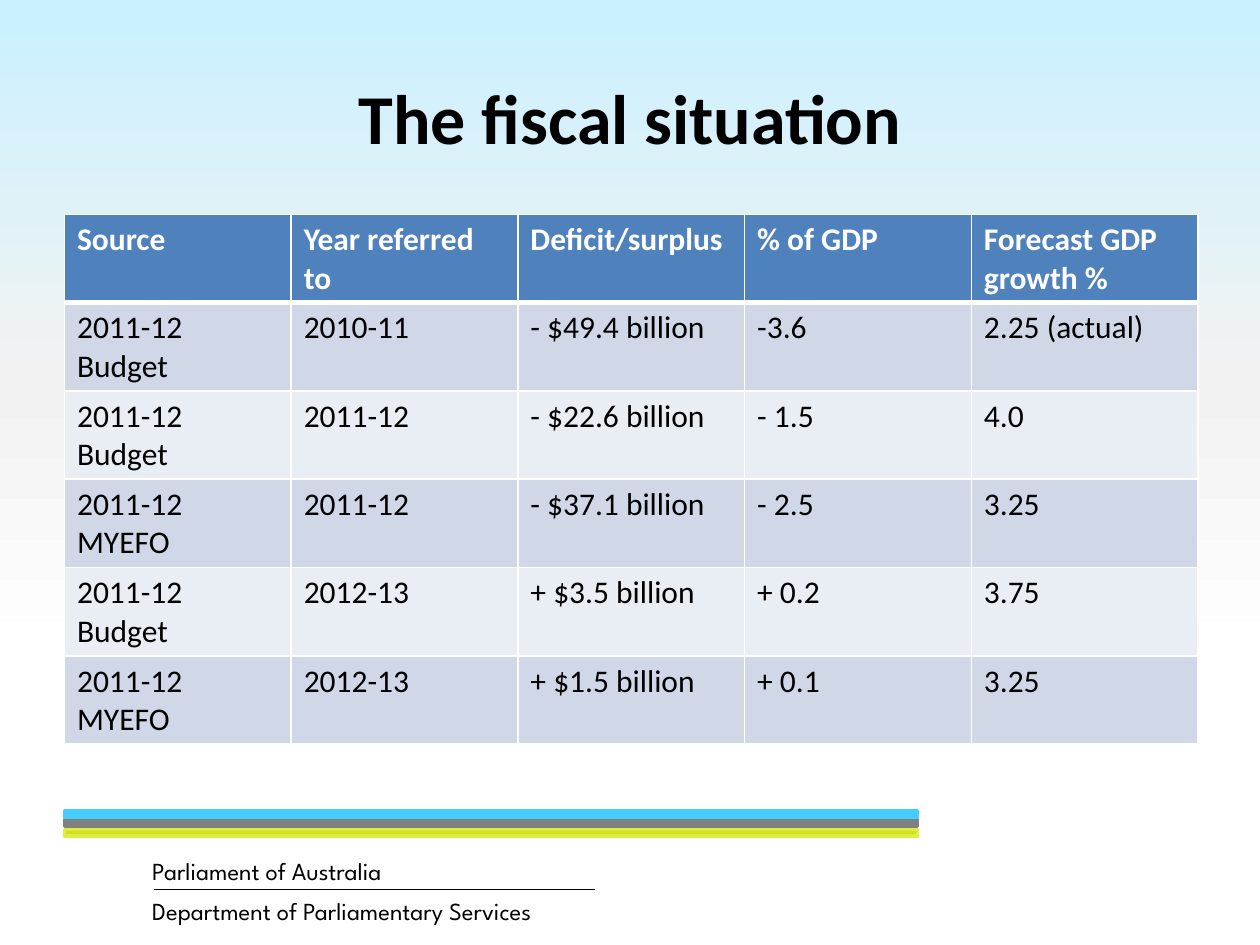
"""Build the fiscal situation slide with its forecast table and department footer."""
from dataclasses import dataclass

from lxml import etree
from pptx import Presentation
from pptx import util as u
from pptx.dml.color import RGBColor
from pptx.enum import shapes, text
from pptx.oxml import ns


@dataclass(frozen=True)
class Theme:
    body_font: str = "Calibri"
    footer_font: str = "League Spartan"
    title_size: int = 40
    table_size: int = 18
    footer_size: int = 14
    ink: str = "000000"
    paper: str = "FFFFFF"
    header: str = "4F81BD"
    bands: tuple = ("D0D8E8", "E9EDF4")
    sky: tuple = ((0, "C9F1FF"), (40, "F2F2F2"), (70, "FFFFFF"), (100, "FFFFFF"))
    blue: str = "43CEFF"
    grey: str = "808080"
    lime: str = "CEE020"
    lime_edge: str = "DDEE3E"


def rgb(value):
    return RGBColor.from_string(value)


def add_node(parent, tag, **attributes):
    return etree.SubElement(parent, ns.qn(tag), attributes)


class SlideBuilder:
    def __init__(self, page, theme):
        self.page = page
        self.theme = theme

    def background(self, stops):
        fill = self.page.background.fill
        fill.gradient()
        fill.gradient_angle = 270
        stop_list = next(self.page.element.iter(ns.qn("a:gsLst")))
        for stop in list(stop_list):
            stop_list.remove(stop)
        for percent, colour in stops:
            stop = add_node(stop_list, "a:gs", pos=str(percent * 1000))
            add_node(stop, "a:srgbClr", val=colour)

    def span(self, para, words, font, size, colour, bold=False):
        span = para.add_run()
        span.text = words
        span.font.name = font
        span.font.size = u.Pt(size)
        span.font.bold = bold
        span.font.color.rgb = rgb(colour)

    def text_box(self, left, top, width, height):
        box = self.page.shapes.add_textbox(u.Cm(left), u.Cm(top), u.Cm(width), u.Cm(height))
        frame = box.text_frame
        frame.word_wrap = True
        frame.vertical_anchor = text.MSO_ANCHOR.MIDDLE
        return frame

    def title(self, words):
        para = self.text_box(1.27, 0.76, 22.86, 3.18).paragraphs[0]
        para.alignment = text.PP_ALIGN.CENTER
        self.span(para, words, self.theme.body_font, self.theme.title_size, self.theme.ink, True)

    def footer(self, words, top):
        frame = self.text_box(2.69, top, 25.4, 0.86)
        frame.auto_size = text.MSO_AUTO_SIZE.SHAPE_TO_FIT_TEXT
        frame.margin_left = u.Cm(0.38)
        self.span(frame.paragraphs[0], words, self.theme.footer_font,
                  self.theme.footer_size, self.theme.ink)

    def bar(self, top, fill, edge):
        bar = self.page.shapes.add_shape(
            shapes.MSO_SHAPE.RECTANGLE, u.Cm(1.3), u.Cm(top), u.Cm(17.2), u.Cm(0.13))
        bar.shadow.inherit = False
        bar.fill.solid()
        bar.fill.fore_color.rgb = rgb(fill)
        bar.line.color.rgb = rgb(edge)
        bar.line.width = u.Pt(2)

    def rule(self, left, right, top):
        rule = self.page.shapes.add_connector(
            shapes.MSO_CONNECTOR.STRAIGHT, u.Cm(left), u.Cm(top), u.Cm(right), u.Cm(top))
        rule.line.color.rgb = rgb(self.theme.ink)
        rule.line.width = u.Pt(0.75)
        add_node(rule.element.spPr, "a:effectLst")

    def borders(self, cell, top, bottom):
        properties = cell._tc.get_or_add_tcPr()
        for side, points in (("L", 1), ("R", 1), ("T", top), ("B", bottom)):
            edge = add_node(properties, f"a:ln{side}", w=str(u.Pt(points)))
            add_node(add_node(edge, "a:solidFill"), "a:srgbClr", val=self.theme.paper)

    def table(self, rows, left, top, column_width, row_height):
        theme = self.theme
        columns = len(rows[0])
        grid = self.page.shapes.add_table(
            len(rows), columns, u.Cm(left), u.Cm(top),
            u.Cm(column_width * columns), u.Cm(row_height * len(rows))).table
        for row_index, row in enumerate(rows):
            is_header = row_index == 0
            fill = theme.header if is_header else theme.bands[(row_index - 1) % 2]
            for column_index, words in enumerate(row):
                cell = grid.cell(row_index, column_index)
                self.borders(cell, 3 if row_index == 1 else 1, 3 if is_header else 1)
                cell.fill.solid()
                cell.fill.fore_color.rgb = rgb(fill)
                self.span(cell.text_frame.paragraphs[0], words, theme.body_font,
                          theme.table_size, theme.paper if is_header else theme.ink, is_header)


FORECASTS = (
    ("Source", "Year referred to", "Deficit/surplus", "% of GDP", "Forecast GDP growth %"),
    ("2011-12 Budget", "2010-11", "- $49.4 billion", "-3.6", "2.25 (actual)"),
    ("2011-12 Budget", "2011-12", "- $22.6 billion", "- 1.5", "4.0"),
    ("2011-12 MYEFO", "2011-12", "- $37.1 billion", "- 2.5", "3.25"),
    ("2011-12 Budget", "2012-13", "+ $3.5 billion", "+ 0.2", "3.75"),
    ("2011-12 MYEFO", "2012-13", "+ $1.5 billion", "+ 0.1", "3.25"),
)


def main():
    theme = Theme()
    deck = Presentation()
    deck.slide_width, deck.slide_height = u.Cm(25.4), u.Cm(19.05)
    builder = SlideBuilder(deck.slides.add_slide(deck.slide_layouts[6]), theme)
    builder.background(theme.sky)
    builder.bar(16.53, theme.grey, theme.grey)
    builder.bar(16.72, theme.lime, theme.lime_edge)
    builder.bar(16.34, theme.blue, theme.blue)
    builder.footer("Department of Parliamentary Services", 17.93)
    builder.footer("Parliament of Australia", 17.12)
    builder.rule(3.1, 11.99, 17.93)
    builder.title("The fiscal situation")
    builder.table(FORECASTS, 1.3, 4.32, 4.57, 1.78)
    deck.save("out.pptx")


if __name__ == "__main__":
    main()
